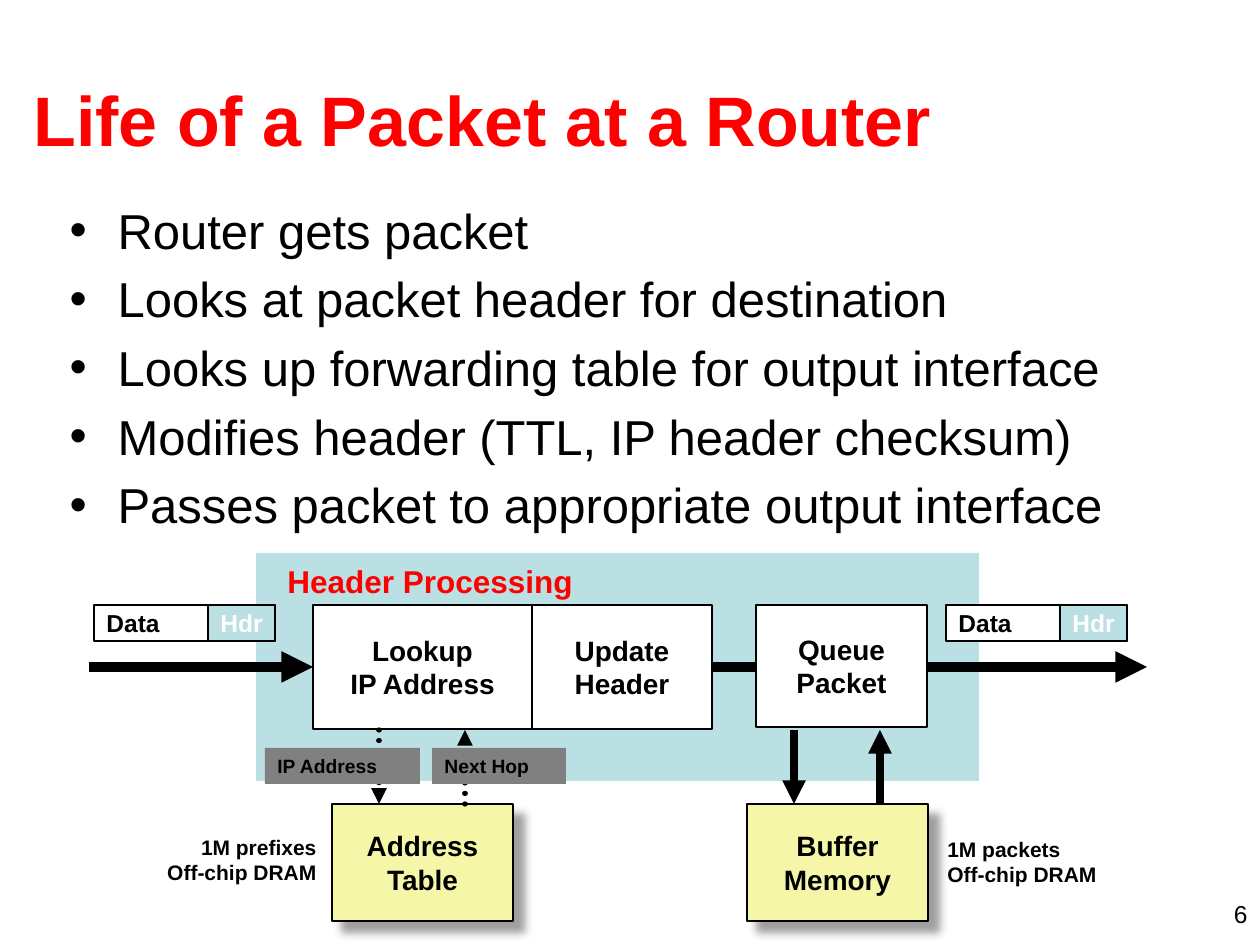
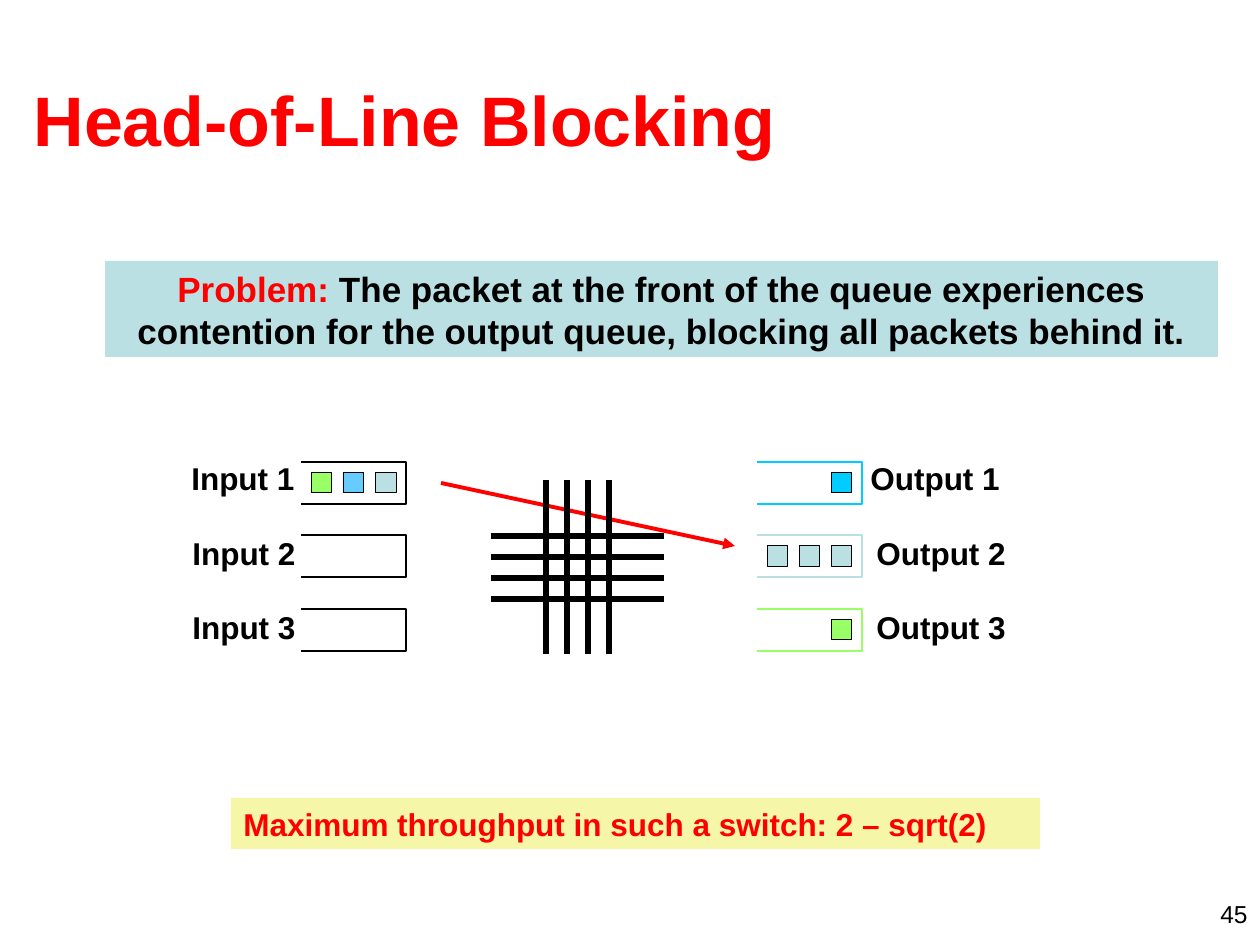
"""Build two slides on router packet flow and queue blocking."""
from dataclasses import dataclass

from lxml import etree
from pptx import Presentation
from pptx.dml.color import RGBColor
from pptx.enum.dml import MSO_LINE
from pptx.enum.shapes import MSO_CONNECTOR, MSO_SHAPE
from pptx.enum.text import MSO_ANCHOR, MSO_AUTO_SIZE, PP_ALIGN
from pptx.oxml.ns import qn
from pptx.util import Emu, Pt

LEFT, MID, RIGHT = PP_ALIGN.LEFT, PP_ALIGN.CENTER, PP_ALIGN.RIGHT
CENTRE = MSO_ANCHOR.MIDDLE
FIXED = MSO_AUTO_SIZE.NONE
RECT = MSO_SHAPE.RECTANGLE
LINE = MSO_CONNECTOR.STRAIGHT
DOTS = MSO_LINE.ROUND_DOT
SCALE = 914400 / 126
FONT = "Arial"
INK = {
    "black": "000000", "white": "FFFFFF", "red": "FF0000", "pale": "BBE0E3",
    "cream": "F6F6A8", "grey": "808080", "sky": "66CCFF", "cyan": "00CCFF",
    "lime": "99FF66",
}


@dataclass(frozen=True)
class Run:
    text: str
    tint: str = "black"


@dataclass(frozen=True)
class Box:
    x: int
    y: int
    w: int
    h: int
    rows: tuple[tuple[Run, ...], ...] = ()
    fill: str = ""
    edge: float = 0
    size: int = 16
    align: PP_ALIGN = MID
    bold: bool = True
    wrap: bool = False
    shade: bool = False


@dataclass(frozen=True)
class Link:
    x1: int
    y1: int
    x2: int
    y2: int
    width: float
    tint: str = "black"
    head: bool = True
    dots: bool = False


@dataclass(frozen=True)
class Bin:
    x: int
    row: int
    edge: str
    packs: tuple[str, ...] = ()


def px(num: int) -> Emu:
    return Emu(round(num * SCALE))


def ink(name: str) -> RGBColor:
    return RGBColor.from_string(INK[name])


def rows(*texts: str, tint: str = "black") -> tuple[tuple[Run, ...], ...]:
    return tuple((Run(text, tint),) for text in texts)


def place(shape, x: int, y: int, w: int, h: int) -> None:
    shape.left, shape.top, shape.width, shape.height = map(px, (x, y, w, h))


def write(frame, lines, size: int, align, bold: bool) -> None:
    for num, line in enumerate(lines):
        para = frame.paragraphs[0] if num == 0 else frame.add_paragraph()
        para.alignment = align
        for part in line:
            run = para.add_run()
            run.text = part.text
            run.font.name = FONT
            run.font.size = Pt(size)
            run.font.bold = bold
            run.font.color.rgb = ink(part.tint)


def cast(shape) -> None:
    props = shape._element.spPr
    for old in props.findall(qn("a:effectLst")):
        props.remove(old)
    fx = etree.SubElement(props, qn("a:effectLst"))
    shade = etree.SubElement(fx, qn("a:outerShdw"), blurRad=str(Pt(5)),
                             dist=str(Pt(8.5)), dir="2700000", algn="ctr")
    tone = etree.SubElement(shade, qn("a:srgbClr"), val=INK["grey"])
    etree.SubElement(tone, qn("a:alpha"), val="75000")


def draw_box(slide, box: Box):
    spot = [px(num) for num in (box.x, box.y, box.w, box.h)]
    if box.fill:
        shape = slide.shapes.add_shape(RECT, *spot)
        shape.shadow.inherit = False
        shape.fill.solid()
        shape.fill.fore_color.rgb = ink(box.fill)
        if box.edge:
            shape.line.color.rgb = ink("black")
            shape.line.width = Pt(box.edge)
        else:
            shape.line.fill.background()
    else:
        shape = slide.shapes.add_textbox(*spot)
    if box.shade:
        cast(shape)
    frame = shape.text_frame
    frame.word_wrap = box.wrap
    frame.auto_size = FIXED
    frame.vertical_anchor = CENTRE
    write(frame, box.rows, box.size, box.align, box.bold)
    return shape


def draw_link(slide, link: Link):
    ends = map(px, (link.x1, link.y1, link.x2, link.y2))
    wire = slide.shapes.add_connector(LINE, *ends)
    wire.line.color.rgb = ink(link.tint)
    wire.line.width = Pt(link.width)
    props = wire._element.spPr
    stroke = props.find(qn("a:ln"))
    if link.dots:
        wire.line.dash_style = DOTS
        stroke.set("cap", "rnd")
    if link.head:
        etree.SubElement(stroke, qn("a:tailEnd"), type="triangle")
    etree.SubElement(props, qn("a:effectLst"))
    return wire


def draw_bin(slide, bin: Bin) -> None:
    top = 462 + bin.row * 147 // 2
    for slot, tint in enumerate(bin.packs, 3 - len(bin.packs)):
        draw_box(slide, Box(bin.x + 10 + 32 * slot, top + 10, 21, 21,
                            fill=tint, edge=0.5))
    right, base = bin.x + 105, top + 42
    path = slide.shapes.build_freeform(bin.x, top, scale=SCALE)
    path.add_line_segments([(right, top), (right, base), (bin.x, base)],
                           close=False)
    shape = path.convert_to_shape()
    shape.shadow.inherit = False
    shape.fill.background()
    shape.line.color.rgb = ink(bin.edge)
    shape.line.width = Pt(1.5)


def start(deck, layout: int, title: str, page: str):
    slide = deck.slides.add_slide(deck.slide_layouts[layout])
    head = slide.shapes.title
    place(head, 21, 40, 1207, 158)
    head.text_frame.vertical_anchor = CENTRE
    head.text_frame.auto_size = FIXED
    write(head.text_frame, rows(title, tint="red"), 40, LEFT, True)
    draw_box(slide, Box(966, 896, 294, 36, rows(page), size=14, align=RIGHT,
                        bold=False, wrap=True))
    return slide


def list_steps(slide, steps: tuple[str, ...]) -> None:
    body = slide.placeholders[1]
    place(body, 57, 194, 1134, 399)
    frame = body.text_frame
    frame.auto_size = FIXED
    write(frame, rows(*steps), 28, LEFT, False)
    for para in frame.paragraphs:
        props = para._p.get_or_add_pPr()
        props.set("marL", str(px(48)))
        props.set("indent", str(px(-48)))
        etree.SubElement(props, qn("a:buChar"), char="•")


def draw_packet(slide, x: int) -> None:
    draw_box(slide, Box(x, 605, 181, 36, rows("Data"), "white", 1, 14, LEFT))
    draw_box(slide, Box(x + 114, 605, 67, 36, rows("Hdr", tint="white"),
                        "pale", 1, 14))


def build_life(deck) -> None:
    slide = start(deck, 1, "Life of a Packet at a Router", "6")
    list_steps(slide, (
        "Router gets packet",
        "Looks at packet header for destination",
        "Looks up forwarding table for output interface",
        "Modifies header (TTL, IP header checksum)",
        "Passes packet to appropriate output interface",
    ))
    draw_box(slide, Box(256, 553, 723, 228, fill="pale"))
    lookup = draw_box(slide, Box(313, 605, 219, 124,
                                 rows("Lookup", "IP Address"), "white", 1))
    update = draw_box(slide, Box(532, 605, 180, 124,
                                 rows("Update", "Header"), "white", 1))
    draw_box(slide, Box(275, 556, 426, 50,
                        rows("Header Processing", tint="red"), size=18,
                        align=LEFT))
    enter = draw_link(slide, Link(89, 667, 313, 667, 6))
    enter.end_connect(lookup, 1)
    leave = draw_link(slide, Link(712, 667, 1147, 667, 6))
    leave.begin_connect(update, 3)
    for x in (94, 946):
        draw_packet(slide, x)
    draw_box(slide, Box(756, 605, 171, 122, rows("Queue", "Packet"),
                        "white", 1))
    for x, words in ((332, ("Address", "Table")), (747, ("Buffer", "Memory"))):
        draw_box(slide, Box(x, 804, 181, 117, rows(*words), "cream", 1,
                            shade=True))
    for x, width, dots in ((379, 3, True), (794, 4.5, False)):
        draw_link(slide, Link(x, 730, x, 804, width, dots=dots))
        draw_link(slide, Link(x + 86, 804, x + 86, 730, width, dots=dots))
    for x, width, word in ((265, 155, "IP Address"), (432, 134, "Next Hop")):
        draw_box(slide, Box(x, 748, width, 36, rows(word), "grey", size=11,
                            align=LEFT))
    for x, y, word, align in ((103, 828, "1M prefixes", RIGHT),
                              (935, 830, "1M packets", LEFT)):
        draw_box(slide, Box(x, y, 226, 63, rows(word, "Off-chip DRAM"),
                            size=12, align=align, wrap=True))


def build_block(deck) -> None:
    slide = start(deck, 5, "Head-of-Line Blocking", "45")
    bins = (
        Bin(301, 0, "black", ("lime", "sky", "pale")),
        Bin(301, 1, "black"),
        Bin(301, 2, "black"),
        Bin(757, 0, "cyan", ("cyan",)),
        Bin(757, 1, "pale", ("pale",) * 3),
        Bin(757, 2, "lime", ("lime",)),
    )
    for bin in bins:
        draw_bin(slide, bin)
    spots = ((179, 858, 453), (180, 864, 528), (180, 864, 602))
    for num, (left, right, y) in enumerate(spots, 1):
        for x, width, word in ((left, 129, "Input"), (right, 155, "Output")):
            draw_box(slide, Box(x, y, width, 50, rows(f"{word} {num}"),
                                size=18, align=LEFT))
    problem = (Run("Problem:", "red"),
               Run(" The packet at the front of the queue experiences "
                   "contention for the output queue, blocking all packets "
                   "behind it."))
    draw_box(slide, Box(105, 261, 1113, 96, (problem,), "pale", size=20,
                        wrap=True))
    draw_link(slide, Link(441, 483, 735, 546, 2.25, "red"))
    draw_box(slide, Box(231, 798, 809, 51, rows(
        "Maximum throughput in such a switch: 2 – sqrt(2)", tint="red"),
        "cream", size=18, align=LEFT, wrap=True))
    for step in range(0, 84, 21):
        x, y = 546 + step, 536 + step
        draw_link(slide, Link(x, 480, x, 654, 3, head=False))
        draw_link(slide, Link(491, y, 664, y, 3, head=False))


def main() -> None:
    deck = Presentation()
    deck.slide_width, deck.slide_height = px(1260), px(945)
    build_life(deck)
    build_block(deck)
    deck.save("out.pptx")


if __name__ == "__main__":
    main()
